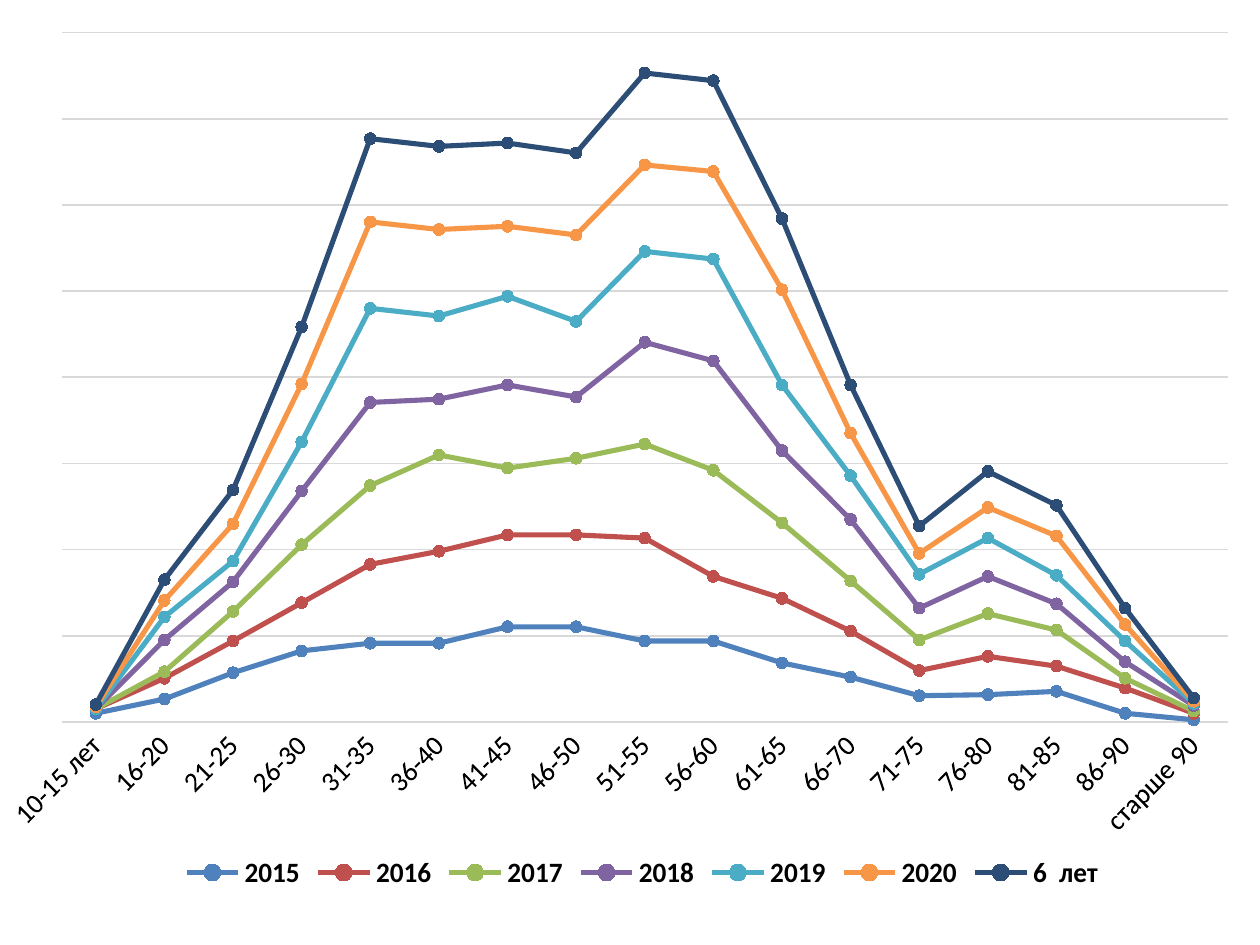
from lxml import etree
from pptx import Presentation
from pptx import util as u
from pptx.chart.data import CategoryChartData
from pptx.dml.color import RGBColor
from pptx.enum import chart as ch
from pptx.oxml.ns import qn

FONT = "Calibri"
COLOURS = {
    "text": "000000", "grid": "D9D9D9", "plot": "FFFFFF",
    "2015": "4F81BD", "2016": "C0504D", "2017": "9BBB59", "2018": "8064A2",
    "2019": "4BACC6", "2020": "F79646", "6  лет": "2C4D75",
}
AGES = ["10-15 лет", *(f"{start}-{start + 4}" for start in range(16, 87, 5)), "старше 90"]
COUNTS = {
    "2015": [8, 21, 45, 65, 72, 72, 87, 87, 74, 74, 54, 41, 24, 25, 28, 8, 2],
    "2016": [4, 19, 29, 44, 72, 84, 84, 84, 94, 59, 59, 42, 23, 35, 23, 23, 6],
    "2017": [0, 6, 27, 53, 72, 88, 61, 70, 86, 97, 69, 46, 28, 39, 33, 9, 2],
    "2018": [0, 29, 27, 49, 76, 51, 76, 56, 93, 100, 66, 56, 29, 34, 24, 15, 5],
    "2019": [None, 21, 19, 45, 86, 76, 81, 69, 83, 93, 60, 40, 31, 35, 26, 19, 2],
    "2020": [2, 15, 34, 53, 79, 79, 64, 79, 79, 80, 87, 39, 19, 28, 36, 15, 2],
    "6  лет": [2, 19, 31, 52, 76, 76, 76, 75, 84, 83, 65, 44, 25, 33, 28, 15, 3],
}


def px(length):
    return u.Emu(round(length * 914400 / 168))


def set_font(font, size, bold=False):
    font.name = FONT
    font.size = u.Pt(size)
    font.bold = bold
    font.color.rgb = RGBColor.from_string(COLOURS["text"])


deck = Presentation()
deck.slide_width, deck.slide_height = px(1260), px(945)
page = deck.slides.add_slide(deck.slide_layouts[6])

# Stacked line chart
data = CategoryChartData()
data.categories = AGES
for year, counts in COUNTS.items():
    data.add_series(year, counts)
chart = page.shapes.add_chart(
    ch.XL_CHART_TYPE.LINE_MARKERS_STACKED,
    px(8), px(23), px(1237), px(873), data).chart
chart.has_title = False
set_font(chart.font, 10)

# Lines and markers
for series in chart.plots[0].series:
    shade = RGBColor.from_string(COLOURS[series.name])
    series.smooth = False
    series.format.line.width = u.Pt(2.25)
    series.format.line.color.rgb = shade
    series.marker.style = ch.XL_MARKER_STYLE.CIRCLE
    series.marker.size = 5
    for part in (series.marker.format.fill, series.marker.format.line.fill):
        part.solid()
        part.fore_color.rgb = shade

# Axes: eight equal grid intervals, slanted age labels
ages = chart.category_axis
ages.major_tick_mark = ages.minor_tick_mark = ch.XL_TICK_MARK.NONE
set_font(ages.tick_labels.font, 12)
ages._element.find(qn("c:txPr")).find(qn("a:bodyPr")).set("rot", "-2700000")
values = chart.value_axis
values.visible = False
values.minimum_scale, values.maximum_scale = 0, 630
values.major_unit = 630 / 8
values.has_major_gridlines = True
for line in (ages.format.line, values.major_gridlines.format.line):
    line.width = u.Pt(0.75)
    line.color.rgb = RGBColor.from_string(COLOURS["grid"])

# Legend
chart.has_legend = True
chart.legend.position = ch.XL_LEGEND_POSITION.BOTTOM
chart.legend.include_in_layout = False
set_font(chart.legend.font, 12, bold=True)

# Plot area: fixed inner position and plain fill
area = chart._chartSpace.chart.plotArea
for old in area.findall(qn("c:layout")):
    area.remove(old)
layout = etree.Element(qn("c:layout"))
area.insert(0, layout)
manual = etree.SubElement(layout, qn("c:manualLayout"))
for tag, val in (("layoutTarget", "inner"), ("xMode", "edge"), ("yMode", "edge"),
                 ("x", "0.018"), ("y", "0.011"), ("w", "0.968"), ("h", "0.79")):
    etree.SubElement(manual, qn(f"c:{tag}")).set("val", val)
fill = etree.SubElement(etree.SubElement(area, qn("c:spPr")), qn("a:solidFill"))
etree.SubElement(fill, qn("a:srgbClr")).set("val", COLOURS["plot"])

# A missing count is drawn as zero
chart._chartSpace.chart.find(qn("c:dispBlanksAs")).set("val", "zero")

deck.save("out.pptx")
